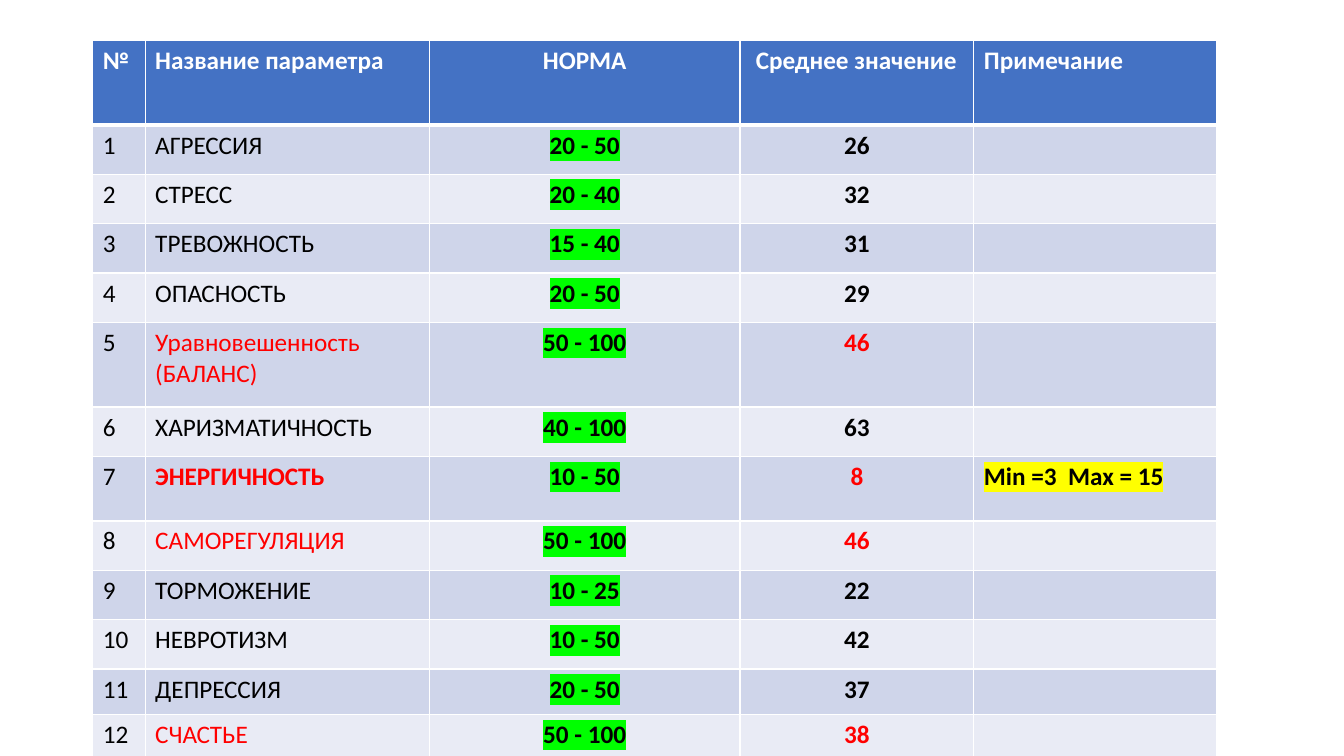
from lxml.etree import SubElement
from pptx import Presentation
from pptx.dml.color import RGBColor as Rgb
from pptx.enum.text import PP_ALIGN as Align
from pptx.oxml.ns import qn
from pptx.util import Inches, Pt

HUES = {"head": "4472C4", "odd": "CFD5EA", "even": "E9EBF5", "white": "FFFFFF",
        "black": "000000", "red": "FF0000", "green": "00FF00", "yellow": "FFFF00"}
HEADS = ["№", "Название параметра", "НОРМА", " Среднее значение", "Примечание"]
TRAITS = [
    ("АГРЕССИЯ", "20 - 50", 26), ("СТРЕСС", "20 - 40", 32),
    ("ТРЕВОЖНОСТЬ", "15 - 40", 31), ("ОПАСНОСТЬ", "20 - 50", 29),
    ("Уравновешенность (БАЛАНС)", "50 - 100", 46), ("ХАРИЗМАТИЧНОСТЬ", "40 - 100", 63),
    ("ЭНЕРГИЧНОСТЬ", "10 - 50", 8), ("САМОРЕГУЛЯЦИЯ", "50 - 100", 46),
    ("ТОРМОЖЕНИЕ", "10 - 25", 22), ("НЕВРОТИЗМ", "10 - 50", 42),
    ("ДЕПРЕССИЯ", "20 - 50", 37), ("СЧАСТЬЕ", "50 - 100", 38),
]
NOTES = {7: "Min =3  Max = 15"}
WIDTHS = [0.52, 2.82, 3.08, 2.32, 2.41]
TALL = {0: 0.84, 5: 0.84, 7: 0.64, 11: 0.45, 12: 0.45}


class Deck:
    """Holds the table style and the current slide."""

    def __init__(self, slide):
        self.slide = slide
        self.font = {"name": "Calibri", "size": Pt(18)}

    def grid(self, left, top, widths, highs):
        frame = self.slide.shapes.add_table(
            len(highs), len(widths), Inches(left), Inches(top),
            Inches(sum(widths)), Inches(sum(highs)))
        table = frame.table
        for col, width in zip(table.columns, widths):
            col.width = Inches(width)
        for row, high in zip(table.rows, highs):
            row.height = Inches(high)
        return table

    def text(self, cell, words, hue="black", bold=False, mid=False, mark=None):
        para = cell.text_frame.paragraphs[0]
        para.alignment = Align.CENTER if mid else Align.LEFT
        run = para.add_run()
        run.text = words
        for key, value in {**self.font, "bold": bold}.items():
            setattr(run.font, key, value)
        run.font.color.rgb = Rgb.from_string(HUES[hue])
        if mark:
            props = run.font._element
            light = SubElement(props, qn("a:highlight"))
            SubElement(light, qn("a:srgbClr"), val=HUES[mark])
            props.find(qn("a:solidFill")).addnext(light)

    def paint(self, cell, hue, top=1, base=1):
        props = cell._tc.get_or_add_tcPr()
        for side, size in zip("LRTB", (1, 1, top, base)):
            line = SubElement(props, qn(f"a:ln{side}"), w=str(Pt(size)))
            fill = SubElement(line, qn("a:solidFill"))
            SubElement(fill, qn("a:srgbClr"), val=HUES["white"])
        cell.fill.solid()
        cell.fill.fore_color.rgb = Rgb.from_string(HUES[hue])


def main():
    show = Presentation()
    show.slide_width, show.slide_height = Inches(13.33), Inches(7.5)
    deck = Deck(show.slides.add_slide(show.slide_layouts[6]))
    highs = [TALL.get(row, 0.49) for row in range(len(TRAITS) + 1)]
    table = deck.grid(0.92, 0.4, WIDTHS, highs)
    for col, head in enumerate(HEADS):
        cell = table.cell(0, col)
        deck.paint(cell, "head", base=3)
        deck.text(cell, head, "white", True, mid=col == 2)
    for row, (name, norm, mean) in enumerate(TRAITS, 1):
        cells = table.rows[row].cells
        for cell in cells:
            deck.paint(cell, "odd" if row % 2 else "even", top=3 if row == 1 else 1)
        low, high = map(int, norm.split(" - "))
        hue = "black" if low <= mean <= high else "red"
        deck.text(cells[0], str(row))
        deck.text(cells[1], name, hue, bold=row in NOTES)
        deck.text(cells[2], norm, bold=True, mid=True, mark="green")
        deck.text(cells[3], str(mean), hue, True, mid=True)
        if row in NOTES:
            deck.text(cells[4], NOTES[row], bold=True, mark="yellow")
    show.save("out.pptx")


if __name__ == "__main__":
    main()
